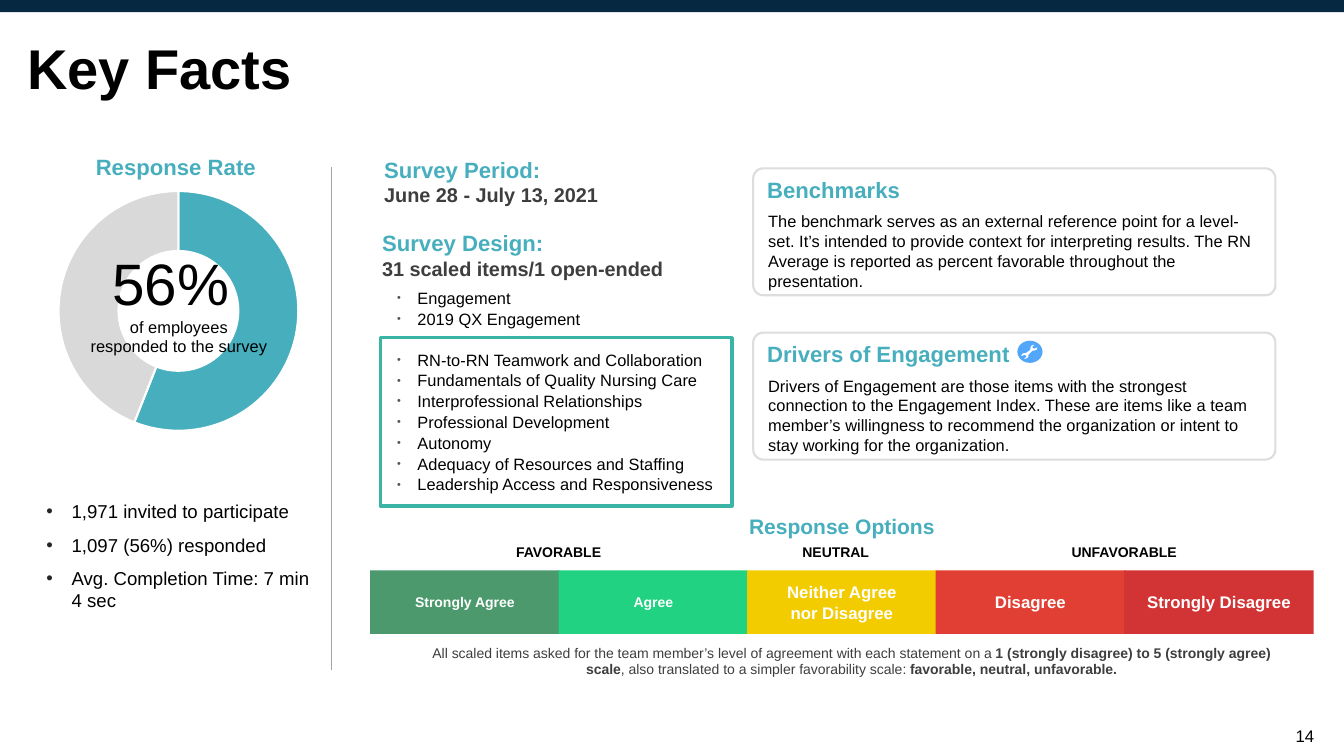
from lxml.etree import SubElement
from pptx import Presentation
from pptx.chart.data import CategoryChartData
from pptx.dml.color import RGBColor
from pptx.enum.chart import XL_CHART_TYPE as ChartType
from pptx.enum.shapes import MSO_CONNECTOR as Connector, MSO_SHAPE as Shape
from pptx.enum.text import MSO_ANCHOR as Anchor, PP_ALIGN as Align
from pptx.oxml.ns import qn
from pptx.util import Inches, Pt

WIDTH, HEIGHT = 13.33, 7.5
FONT = "Arial"
TEAL, BLACK, WHITE, DARK = "47AEBE", "000000", "FFFFFF", "3E3E3E"

# Text styles
HEADING = dict(size=15.8, color=TEAL, bold=True)
FACT = dict(size=14.2, color=DARK, bold=True)
BODY = dict(size=11.7)
CENTRED_BODY = dict(size=11.7, align=Align.CENTER)
ITEM = dict(size=11.7, before=0.8, bullet=(0.35, 0.2, "535353", 66))
COUNT = dict(size=13.3, before=8, bullet=(0.25, 0.25, "262626", 100))
LABEL = dict(size=10, bold=True, align=Align.CENTER)
NOTE = dict(size=10, color=DARK, align=Align.CENTER)

# Content
RESPONSE_RATE = {"1": 56, "2": 44}
RATE_COLORS = [TEAL, "D9D9D9"]
COUNTS = ["1,971 invited to participate", "1,097 (56%) responded",
          "Avg. Completion Time: 7 min 4 sec"]
INDEX_ITEMS = ["Engagement", "2019 QX Engagement"]
DRIVER_ITEMS = ["RN-to-RN Teamwork and Collaboration",
                "Fundamentals of Quality Nursing Care",
                "Interprofessional Relationships", "Professional Development",
                "Autonomy", "Adequacy of Resources and Staffing",
                "Leadership Access and Responsiveness"]
CARDS = [
    ("Benchmarks", "The benchmark serves as an external reference point for a "
     "level-set. It’s intended to provide context for interpreting results. "
     "The RN Average is reported as percent favorable throughout the presentation."),
    ("Drivers of Engagement", "Drivers of Engagement are those items with the "
     "strongest connection to the Engagement Index. These are items like a team "
     "member’s willingness to recommend the organization or intent to stay "
     "working for the organization."),
]
# Answer lines, fill, text size
OPTIONS = [(["Strongly Agree"], "4B996C", 10), (["Agree"], "20D281", 10),
           (["Neither Agree", "nor Disagree"], "F3CC00", 12),
           (["Disagree"], "E13F34", 12), (["Strongly Disagree"], "D23334", 12)]
# Label, centre counted in option columns
FAVORABILITY = [("FAVORABLE", 1), ("NEUTRAL", 2.47), ("UNFAVORABLE", 4)]
SCALE_NOTE = [
    ("All scaled items asked for the team member’s level of agreement with "
     "each statement on a ", False),
    ("1 (strongly disagree) to 5 (strongly agree) scale", True),
    (", also translated to a simpler favorability scale: ", False),
    ("favorable, neutral, unfavorable.", True),
]

# Layout
CARD_LEFT, CARD_TOP, CARD_PITCH, CARD_SIZE = 7.47, 1.67, 1.63, (5.18, 1.26)
BAND_LEFT, BAND_TOP, BAND_PITCH, BAND_HEIGHT = 3.67, 5.66, 1.87, 0.63
LABEL_WIDTH = 2.14
ICON = (10.09, 3.38, 0.25, 0.22)
WRENCH = [(10.25, 3.48), (10.24, 3.48), (10.2, 3.52), (10.2, 3.54), (10.19, 3.55),
          (10.17, 3.56), (10.16, 3.56), (10.18, 3.54), (10.18, 3.53), (10.16, 3.52),
          (10.14, 3.53), (10.13, 3.53), (10.14, 3.51), (10.17, 3.5), (10.18, 3.5),
          (10.22, 3.47), (10.22, 3.45), (10.23, 3.43), (10.26, 3.42), (10.24, 3.44),
          (10.24, 3.45), (10.26, 3.46), (10.28, 3.45), (10.29, 3.45), (10.28, 3.47)]


def rgb(value):
    return RGBColor.from_string(value)


def inches(values):
    return [Inches(value) for value in values]


def set_bullet(paragraph, left, hang, color, percent):
    properties = paragraph._p.get_or_add_pPr()
    properties.set("marL", str(Inches(left)))
    properties.set("indent", str(-Inches(hang)))
    bullet_color = SubElement(properties, qn("a:buClr"))
    SubElement(bullet_color, qn("a:srgbClr"), val=color)
    SubElement(properties, qn("a:buSzPct"), val=str(percent * 1000))
    SubElement(properties, qn("a:buFont"), typeface=FONT)
    SubElement(properties, qn("a:buChar"), char="•")


def write(shape, paragraphs, anchor=Anchor.TOP, insets=(0.04, 0.04)):
    """Fill a shape with (text or list of (text, bold) runs, style) pairs."""
    frame = shape.text_frame
    across, down = inches(insets)
    settings = dict(word_wrap=True, vertical_anchor=anchor, margin_left=across,
                    margin_right=across, margin_top=down, margin_bottom=down)
    for name, value in settings.items():
        setattr(frame, name, value)
    for index, (content, style) in enumerate(paragraphs):
        paragraph = frame.add_paragraph() if index else frame.paragraphs[0]
        if "bullet" in style:
            set_bullet(paragraph, *style["bullet"])
        paragraph.alignment = style.get("align", Align.LEFT)
        paragraph.space_before = Pt(style.get("before", 0) if index else 0)
        paragraph.space_after = Pt(style.get("after", 0))
        if "line" in style:
            paragraph.line_spacing = Pt(style["line"])
        bold = style.get("bold", False)
        runs = [(content, bold)] if isinstance(content, str) else content
        for text, run_bold in runs:
            run = paragraph.add_run()
            run.text = text
            font = dict(name=FONT, size=Pt(style["size"]), bold=run_bold)
            for name, value in font.items():
                setattr(run.font, name, value)
            run.font.color.rgb = rgb(style.get("color", BLACK))


def add_text(slide, box, paragraphs, **options):
    write(slide.shapes.add_textbox(*inches(box)), paragraphs, **options)


def paint(shape, fill=None, line=None, line_width=1):
    shape.shadow.inherit = False
    if fill:
        shape.fill.solid()
        shape.fill.fore_color.rgb = rgb(fill)
    else:
        shape.fill.background()
    if line:
        shape.line.color.rgb = rgb(line)
        shape.line.width = Pt(line_width)
    else:
        shape.line.fill.background()


def add_shape(slide, kind, box, **colors):
    shape = slide.shapes.add_shape(kind, *inches(box))
    paint(shape, **colors)
    return shape


def set_plot_area(chart, **shares):
    """Fix the inner plot area as shares of the chart frame."""
    plot_area = chart._chartSpace.chart.plotArea
    layout = plot_area.find(qn("c:layout"))
    if layout is None:
        layout = SubElement(plot_area, qn("c:layout"))
        plot_area.insert(0, layout)
    manual = SubElement(layout, qn("c:manualLayout"))
    values = dict(layoutTarget="inner", xMode="edge", yMode="edge", **shares)
    for name, value in values.items():
        SubElement(manual, qn("c:" + name), val=str(value))


def add_response_rate(slide):
    data = CategoryChartData()
    data.categories = list(RESPONSE_RATE)
    data.add_series("Series 1", list(RESPONSE_RATE.values()))
    chart = slide.shapes.add_chart(ChartType.DOUGHNUT,
                                   *inches((0.44, 1.52, 2.66, 3.13)), data).chart
    chart.has_legend = chart.has_title = False
    chart.font.name, chart.font.size = FONT, Pt(10)
    chart.font.color.rgb = rgb(BLACK)
    set_plot_area(chart, x=0.05, y=0.12, w=0.9, h=0.76)
    plot = chart.plots[0]
    plot.vary_by_categories = True
    plot._element.find(qn("c:holeSize")).set("val", "80")
    for index, color in enumerate(RATE_COLORS):
        slice_format = plot.series[0].points[index].format
        slice_format.fill.solid()
        slice_format.fill.fore_color.rgb = rgb(color)
        slice_format.line.color.rgb = rgb(WHITE)
        slice_format.line.width = Pt(1.5)
    add_text(slide, (0.46, 1.97, 2.63, 2.04),
             [("56% ", dict(size=41.7, align=Align.CENTER)),
              ("of employees", CENTRED_BODY),
              ("responded to the survey", CENTRED_BODY)], anchor=Anchor.MIDDLE)
    add_text(slide, (0.46, 4.96, 2.65, 1.45),
             [(count, COUNT) for count in COUNTS], insets=(0, 0))
    add_text(slide, (0.68, 1.52, 2.13, 0.26),
             [("Response Rate", dict(HEADING, align=Align.CENTER))], insets=(0, 0))


def add_survey(slide):
    add_text(slide, (3.77, 1.51, 4.35, 0.58),
             [("Survey Period:", HEADING), ("June 28 - July 13, 2021", FACT)],
             anchor=Anchor.MIDDLE)
    group_start = dict(ITEM, before=15)
    add_text(slide, (3.75, 2.24, 5.84, 2.47),
             [("Survey Design:", HEADING),
              ("31 scaled items/1 open-ended", dict(FACT, after=5))]
             + [(item, ITEM) for item in INDEX_ITEMS]
             + [(item, ITEM if index else group_start)
                for index, item in enumerate(DRIVER_ITEMS)])
    add_shape(slide, Shape.RECTANGLE, (3.77, 3.35, 3.49, 1.67),
              line="3AB4A4", line_width=2.25)


def add_cards(slide):
    for index, (heading, body) in enumerate(CARDS):
        top = CARD_TOP + index * CARD_PITCH
        card = add_shape(slide, Shape.ROUNDED_RECTANGLE, (CARD_LEFT, top, *CARD_SIZE),
                         fill=WHITE, line="DDDDDD", line_width=1.5)
        card.adjustments[0] = 0.08
        add_text(slide, (CARD_LEFT + 0.04, top - 0.02, 5.05, 0.46),
                 [(heading, HEADING)], insets=(0.1, 0.1))
        add_text(slide, (CARD_LEFT + 0.05, top + 0.38, 5.09, 0.88),
                 [(body, BODY)], insets=(0.1, 0.05))
    add_shape(slide, Shape.OVAL, ICON, fill="52A7FA")
    start, *corners = [tuple(inches(point)) for point in WRENCH]
    builder = slide.shapes.build_freeform(*start)
    builder.add_line_segments(corners)
    paint(builder.convert_to_shape(), fill=WHITE)


def add_response_options(slide):
    add_text(slide, (5.48, 5.05, 5.74, 0.33),
             [("Response Options", dict(HEADING, size=15, align=Align.CENTER))],
             anchor=Anchor.MIDDLE)
    for index, (lines, color, size) in enumerate(OPTIONS):
        box = (BAND_LEFT + index * BAND_PITCH, BAND_TOP, BAND_PITCH + 0.01, BAND_HEIGHT)
        band = add_shape(slide, Shape.RECTANGLE, box, fill=color)
        style = dict(LABEL, size=size, color=WHITE)
        write(band, [(line, style) for line in lines], anchor=Anchor.MIDDLE)
    for label, column in FAVORABILITY:
        left = BAND_LEFT + column * BAND_PITCH - LABEL_WIDTH / 2
        add_text(slide, (left, 5.35, LABEL_WIDTH, 0.25), [(label, LABEL)],
                 anchor=Anchor.MIDDLE)
    add_text(slide, (4.12, 6.35, 8.65, 0.41), [(SCALE_NOTE, NOTE)])


def main():
    presentation = Presentation()
    presentation.slide_width, presentation.slide_height = inches((WIDTH, HEIGHT))
    slide = presentation.slides.add_slide(presentation.slide_layouts[6])
    add_shape(slide, Shape.RECTANGLE, (0, 0, WIDTH, 0.12), fill="062841")
    add_text(slide, (0.27, 0.3, 11.7, 0.67),
             [("Key Facts", dict(size=40, bold=True, line=52.5))],
             anchor=Anchor.MIDDLE, insets=(0, 0))
    add_response_rate(slide)
    divider = slide.shapes.add_connector(Connector.STRAIGHT,
                                         *inches((3.29, 6.65, 3.29, 1.66)))
    divider.line.color.rgb = rgb("9EA6A9")
    divider.line.width = Pt(1)
    SubElement(divider._element.spPr, qn("a:effectLst"))
    add_survey(slide)
    add_cards(slide)
    add_response_options(slide)
    add_text(slide, (12.85, 7.19, 0.32, 0.22), [("14", dict(size=12))],
             anchor=Anchor.MIDDLE, insets=(0, 0))
    presentation.save("out.pptx")


if __name__ == "__main__":
    main()
